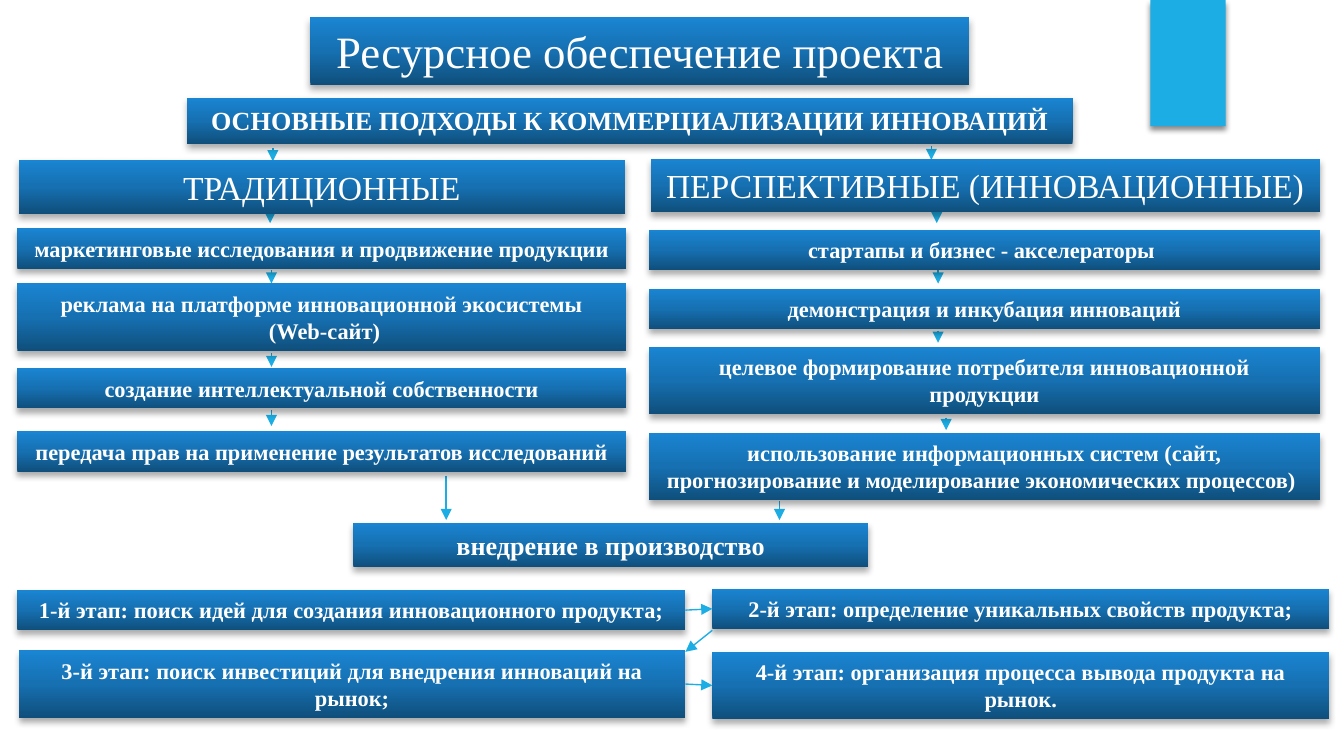
from lxml import etree
from pptx import Presentation
from pptx.dml.color import RGBColor
from pptx.enum import shapes, text
from pptx.oxml.ns import qn
from pptx.util import Inches, Pt

COLORS = {
    "accent": "1CADE4",
    "dark": "0F4F7C",
    "middle": "1670B1",
    "light": "1A85D2",
    "text": "FFFFFF",
    "shadow": "000000",
}
GRADIENT = [(0, "dark"), (50, "middle"), (100, "light")]

TITLE = "Ресурсное обеспечение проекта"
SUBTITLE = "ОСНОВНЫЕ ПОДХОДЫ К КОММЕРЦИАЛИЗАЦИИ ИННОВАЦИЙ"
RESULT = "внедрение в производство"
TRADITIONAL = [
    (1.7, 0.3, "маркетинговые исследования и продвижение продукции"),
    (2.11, 0.5, "реклама на платформе инновационной экосистемы\n (Web-сайт)"),
    (2.74, 0.3, "создание интеллектуальной собственности"),
    (3.21, 0.3, "передача прав на применение результатов исследований"),
]
INNOVATIVE = [
    (1.71, 0.3, "стартапы и бизнес - акселераторы "),
    (2.15, 0.3, "демонстрация и инкубация инноваций"),
    (2.58, 0.5, "целевое формирование потребителя инновационной продукции"),
    (3.22, 0.5, "использование информационных систем (сайт, "
                "прогнозирование и моделирование экономических процессов) "),
]
STAGES = [
    (0.13, 4.39, 4.97, 0.3, "1-й этап: поиск идей для создания инновационного продукта;"),
    (5.3, 4.38, 4.59, 0.3, "2-й этап: определение уникальных свойств продукта;"),
    (0.14, 4.84, 4.96, 0.5, "3-й этап: поиск инвестиций для внедрения инноваций на рынок;"),
    (5.3, 4.85, 4.59, 0.5, "4-й этап: организация процесса вывода продукта на рынок."),
]
DOWN_ARROWS = [
    (2.03, 1.1, 1.2), (2.01, 1.56, 1.66), (2.02, 2.01, 2.11),
    (2.02, 2.63, 2.73), (2.02, 3.05, 3.17), (3.32, 3.54, 3.87),
    (6.93, 1.09, 1.19), (6.97, 1.57, 1.66), (6.98, 2.01, 2.11),
    (6.98, 2.46, 2.55), (7.04, 3.11, 3.2), (5.8, 3.73, 3.87),
]


def rgb(name):
    return RGBColor.from_string(COLORS[name])


def add_color(parent, name):
    return etree.SubElement(parent, qn("a:srgbClr"), val=COLORS[name])


def add_shadow(shape, opacity, blur, distance):
    shape.shadow.inherit = False
    effects = shape._element.spPr.find(qn("a:effectLst"))
    shadow = etree.SubElement(
        effects, qn("a:outerShdw"), blurRad=str(Pt(blur)), dist=str(Pt(distance)),
        dir="5400000", rotWithShape="0")
    etree.SubElement(add_color(shadow, "shadow"), qn("a:alpha"), val=str(opacity * 1000))


def fill_gradient(shape):
    shape.fill.gradient()
    shape.fill.gradient_angle = 90
    stops = shape._element.spPr.find(qn("a:gradFill")).find(qn("a:gsLst"))
    for stop in list(stops):
        stops.remove(stop)
    for position, name in GRADIENT:
        add_color(etree.SubElement(stops, qn("a:gs"), pos=str(position * 1000)), name)


def add_rectangle(slide, left, top, width, height):
    rectangle = slide.shapes.add_shape(
        shapes.MSO_SHAPE.RECTANGLE, Inches(left), Inches(top), Inches(width), Inches(height))
    rectangle.line.fill.background()
    return rectangle


def write_text(frame, wording, size=12, bold=True, font="Times New Roman", color="text"):
    frame.word_wrap = True
    frame.auto_size = text.MSO_AUTO_SIZE.SHAPE_TO_FIT_TEXT
    frame.vertical_anchor = text.MSO_ANCHOR.TOP
    frame.text = wording
    for paragraph in frame.paragraphs:
        paragraph.alignment = text.PP_ALIGN.CENTER
        for run in paragraph.runs:
            run.font.name = font
            run.font.size = Pt(size)
            run.font.bold = bold
            run.font.color.rgb = rgb(color)


def add_box(slide, left, top, width, height, wording, **text_format):
    box = add_rectangle(slide, left, top, width, height)
    fill_gradient(box)
    add_shadow(box, 32, 3.5, 2.2)
    write_text(box.text_frame, wording, **text_format)
    return box


def add_arrow(slide, x1, y1, x2, y2):
    arrow = slide.shapes.add_connector(
        shapes.MSO_CONNECTOR.STRAIGHT, Inches(x1), Inches(y1), Inches(x2), Inches(y2))
    arrow.line.color.rgb = rgb("accent")
    arrow.line.width = Pt(0.75)
    etree.SubElement(arrow.line._get_or_add_ln(), qn("a:tailEnd"), type="triangle")
    etree.SubElement(arrow._element.spPr, qn("a:effectLst"))
    return arrow


def add_accent(slide):
    accent = add_rectangle(slide, 8.56, 0, 0.56, 0.94)
    accent.fill.solid()
    accent.fill.fore_color.rgb = rgb("accent")
    add_shadow(accent, 45, 3, 2)


def add_approach(slide, heading, heading_place, left, width, methods):
    add_box(slide, *heading_place, heading, size=18, bold=False)
    for top, height, method in methods:
        add_box(slide, left, top, width, height, method)


def add_stages(slide):
    first, second, third, fourth = [add_box(slide, *stage) for stage in STAGES]
    for start, end, y in [(first, second, 4.54), (third, fourth, 5.09)]:
        arrow = add_arrow(slide, 5.1, y, 5.3, y)
        arrow.begin_connect(start, 3)
        arrow.end_connect(end, 1)
    add_arrow(slide, 5.3, 4.69, 5.1, 4.85)


def main():
    presentation = Presentation()
    presentation.slide_width = Inches(10)
    presentation.slide_height = Inches(10) * 9 // 16
    slide = presentation.slides.add_slide(presentation.slide_layouts[6])

    add_accent(slide)
    for x, top, bottom in DOWN_ARROWS:
        add_arrow(slide, x, top, x, bottom)
    add_box(slide, 2.31, 0.13, 4.9, 0.5, TITLE, size=24, bold=False)
    add_box(slide, 1.39, 0.73, 6.59, 0.34, SUBTITLE, size=14)
    add_approach(slide, "ТРАДИЦИОННЫЕ", (0.14, 1.19, 4.51, 0.4), 0.13, 4.53, TRADITIONAL)
    add_approach(slide, "ПЕРСПЕКТИВНЫЕ (ИННОВАЦИОННЫЕ)", (4.84, 1.18, 4.98, 0.4),
                 4.83, 4.99, INNOVATIVE)
    add_box(slide, 2.63, 3.89, 3.83, 0.33, RESULT, size=14)
    add_stages(slide)

    presentation.save("out.pptx")


if __name__ == "__main__":
    main()
